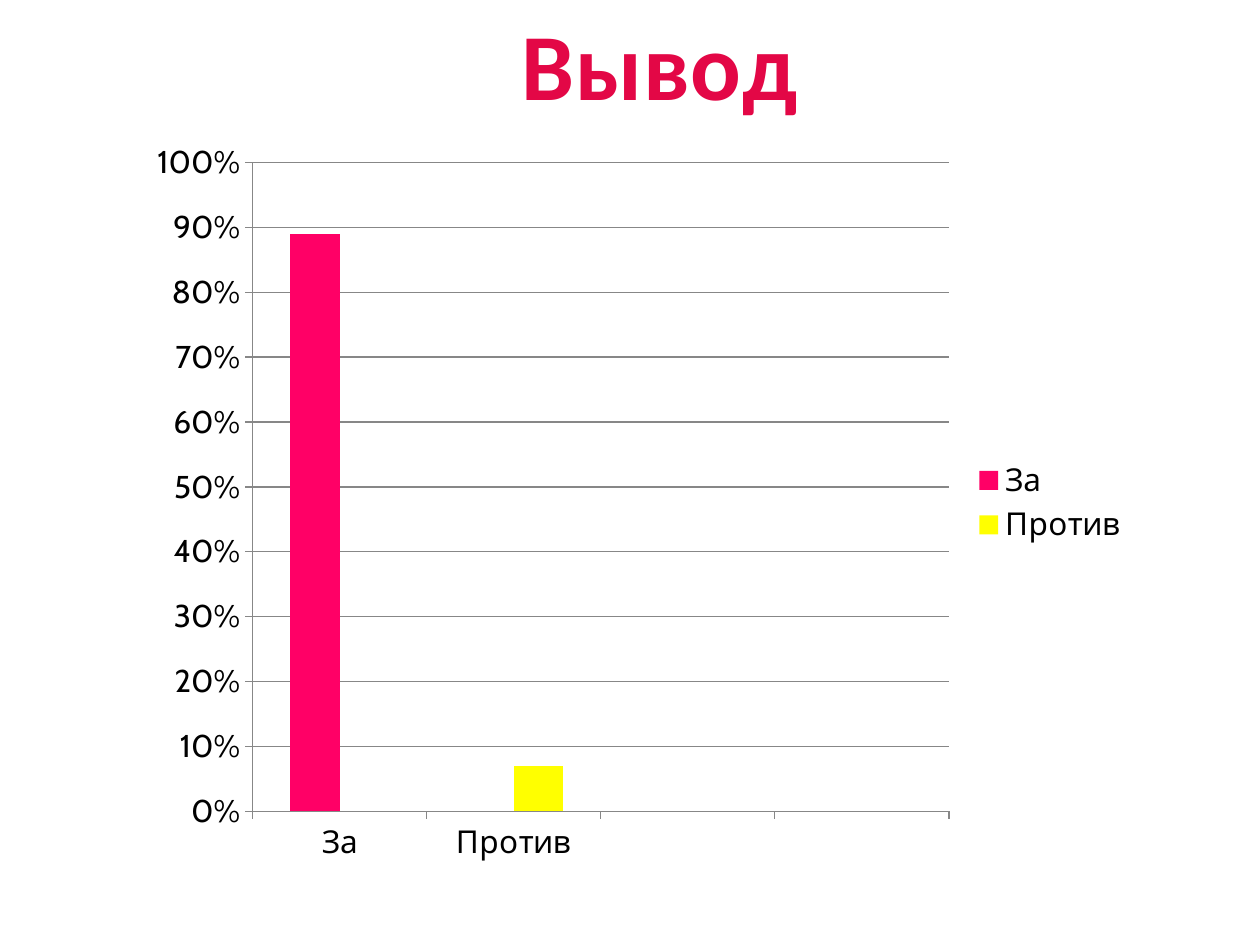
from typing import NamedTuple

from pptx import Presentation
from pptx.chart.data import CategoryChartData
from pptx.dml.color import RGBColor
from pptx.enum.chart import XL_CHART_TYPE, XL_LEGEND_POSITION, XL_TICK_MARK
from pptx.enum.text import MSO_AUTO_SIZE, PP_ALIGN
from pptx.util import Pt

COLUMN = XL_CHART_TYPE.COLUMN_CLUSTERED
RIGHT = XL_LEGEND_POSITION.RIGHT
OUTSIDE = XL_TICK_MARK.OUTSIDE
CENTER = PP_ALIGN.CENTER
GROW = MSO_AUTO_SIZE.SHAPE_TO_FIT_TEXT

RED = RGBColor(0xE3, 0x07, 0x46)
PINK = RGBColor(0xFF, 0x00, 0x66)
YELLOW = RGBColor(0xFF, 0xFF, 0x00)
BLACK = RGBColor(0, 0, 0)
GRAY = RGBColor(0x87, 0x87, 0x87)


class Answer(NamedTuple):
    name: str
    values: tuple[float | None, ...]
    color: RGBColor


ANSWERS = (
    Answer("За", (0.89, None, None, None), PINK),
    Answer("Против", (None, 0.07, None, None), YELLOW),
)
LABELS = ("За", "Против", "", "")


def add_title(slide) -> None:
    box = slide.shapes.add_textbox(Pt(34), Pt(0), Pt(686), Pt(72.7))
    frame = box.text_frame
    frame.word_wrap = True
    frame.auto_size = GROW
    para = frame.paragraphs[0]
    para.alignment = CENTER
    run = para.add_run()
    run.text = "Вывод"
    run._r.get_or_add_rPr().set("spc", "50")
    font = para.font
    font.name, font.size, font.bold = "Calibri", Pt(54), True
    font.color.rgb = RED


def add_votes(slide) -> None:
    data = CategoryChartData(number_format="0%")
    data.categories = LABELS
    for answer in ANSWERS:
        data.add_series(answer.name, answer.values)
    chart = slide.shapes.add_chart(
        COLUMN, Pt(78.5), Pt(73.4), Pt(573.8), Pt(427.7), data
    ).chart
    chart.has_title = False
    chart.font.name, chart.font.size = "Cabin", Pt(18)
    chart.font.color.rgb = BLACK

    plot = chart.plots[0]
    plot.gap_width, plot.overlap = 150, 0
    plot.vary_by_categories = False
    for series, answer in zip(plot.series, ANSWERS):
        series.format.fill.solid()
        series.format.fill.fore_color.rgb = answer.color

    scale = chart.value_axis
    scale.minimum_scale, scale.maximum_scale, scale.major_unit = 0, 1, 0.1
    scale.has_major_gridlines = True
    scale.tick_labels.number_format = "0%"
    scale.tick_labels.number_format_is_linked = False
    for axis in (chart.category_axis, scale):
        axis.major_tick_mark = OUTSIDE
    for part in (chart.category_axis, scale, scale.major_gridlines):
        part.format.line.color.rgb = GRAY
        part.format.line.width = Pt(0.75)

    chart.has_legend = True
    chart.legend.position = RIGHT
    chart.legend.include_in_layout = False


def main() -> None:
    deck = Presentation()
    deck.slide_width, deck.slide_height = Pt(720), Pt(540)
    slide = deck.slides.add_slide(deck.slide_layouts[6])
    add_title(slide)
    add_votes(slide)
    deck.save("out.pptx")


if __name__ == "__main__":
    main()
